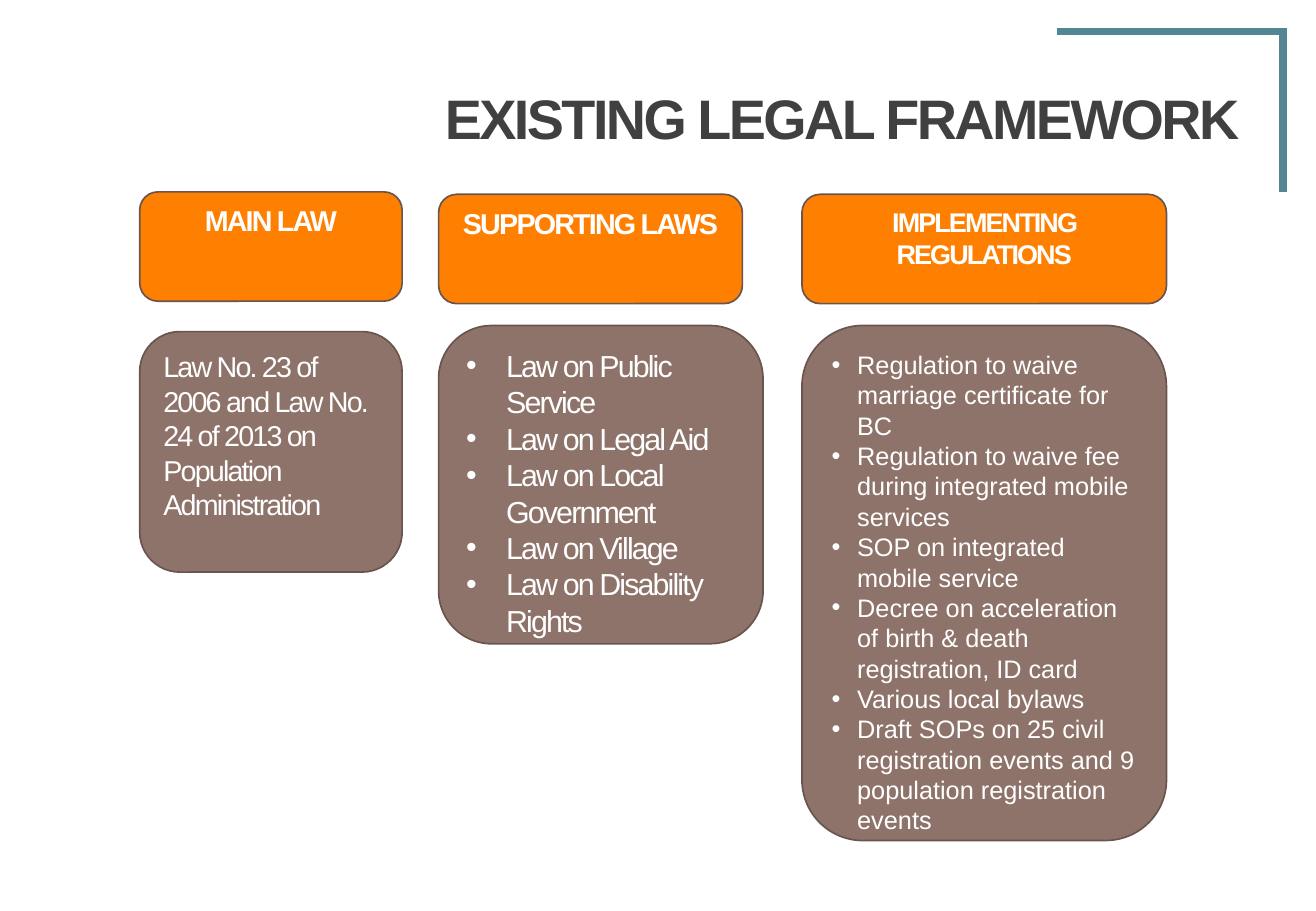
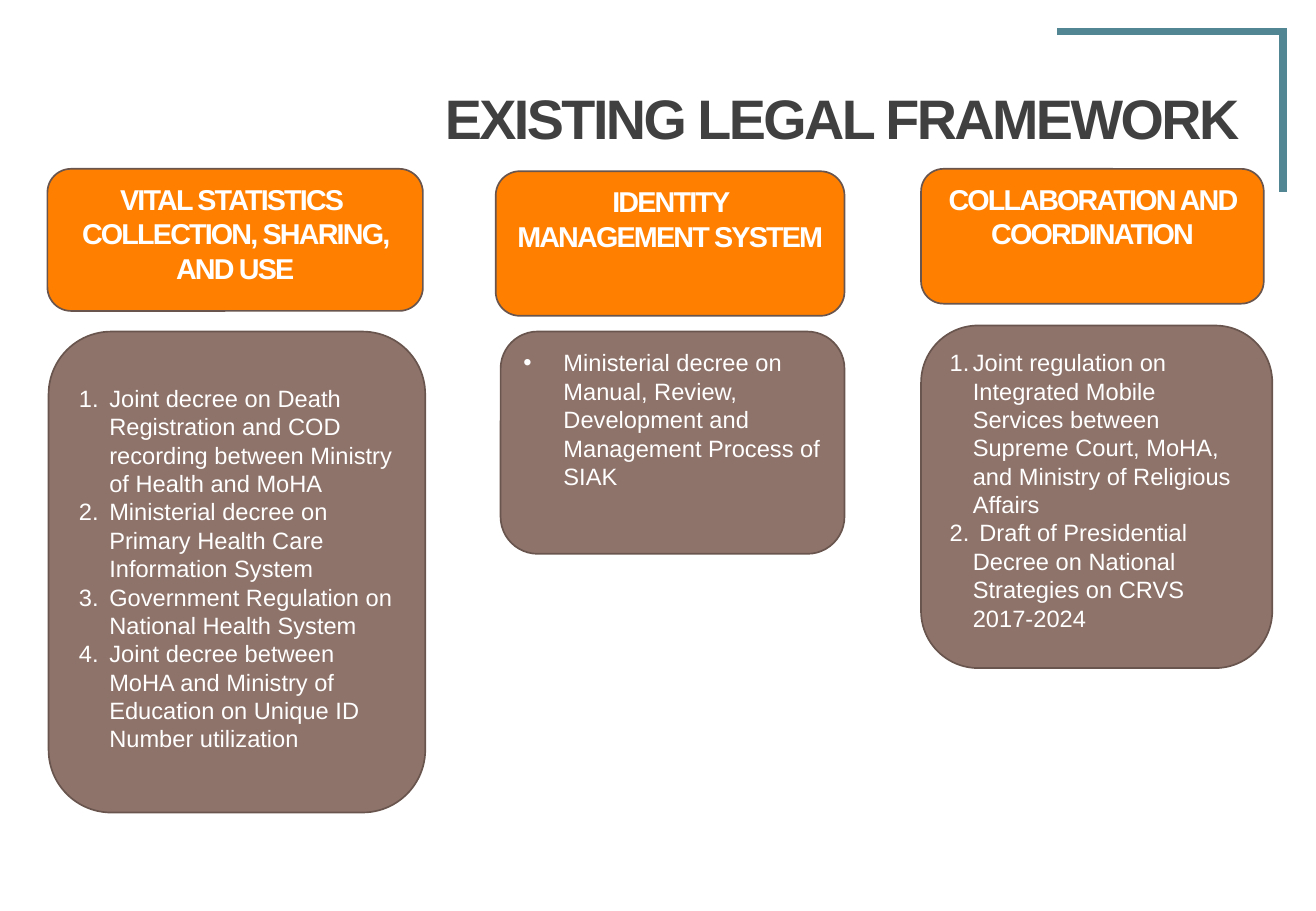
from lxml.etree import SubElement
from pptx import Presentation
from pptx.dml.color import RGBColor
from pptx.enum.shapes import MSO_CONNECTOR, MSO_SHAPE
from pptx.enum.text import MSO_ANCHOR, PP_ALIGN
from pptx.oxml.ns import qn
from pptx.util import Inches, Pt

ORANGE = RGBColor(0xFF, 0x80, 0x00)
BROWN = RGBColor(0x8E, 0x73, 0x6A)
OUTLINE = RGBColor(0x69, 0x55, 0x4E)
TEAL = RGBColor(0x52, 0x86, 0x93)
DARK = RGBColor(0x40, 0x40, 0x40)
WHITE = RGBColor(0xFF, 0xFF, 0xFF)
FONT = "Arial"
TITLE = "EXISTING LEGAL FRAMEWORK"
TIGHT = -1.1
TITLE_SPACING = -1.5


def set_insets(tf, side, top, bottom):
    tf.margin_left = tf.margin_right = Inches(side)
    tf.margin_top, tf.margin_bottom = Inches(top), Inches(bottom)


def add_run(p, text, size, color=WHITE, bold=False, spacing=0):
    r = p.add_run()
    r.text = text
    r.font.name = FONT
    r.font.size = Pt(size)
    r.font.bold = bold
    r.font.color.rgb = color
    if spacing:
        r._r.get_or_add_rPr().set("spc", str(round(spacing * 100)))


def set_marker(p, marker, indent):
    pPr = p._p.get_or_add_pPr()
    pPr.set("marL", str(Inches(indent)))
    pPr.set("indent", str(-Inches(indent)))
    SubElement(pPr, qn("a:buFont")).set("typeface", FONT)
    if marker == "1.":
        SubElement(pPr, qn("a:buAutoNum")).set("type", "arabicPeriod")
    else:
        SubElement(pPr, qn("a:buChar")).set("char", marker)


def add_card(slide, box, fill, lines, size, align=PP_ALIGN.LEFT, bold=False,
             spacing=0, marker=None, indent=0, top=0.05):
    sp = slide.shapes.add_shape(MSO_SHAPE.ROUNDED_RECTANGLE, *map(Inches, box))
    sp.shadow.inherit = False
    sp.fill.solid()
    sp.fill.fore_color.rgb = fill
    sp.line.color.rgb = OUTLINE
    sp.line.width = Pt(1)
    tf = sp.text_frame
    tf.word_wrap = True
    tf.vertical_anchor = MSO_ANCHOR.TOP
    set_insets(tf, 0.1, top, 0.05)
    for i, text in enumerate(lines):
        p = tf.add_paragraph() if i else tf.paragraphs[0]
        p.alignment = align
        if marker:
            set_marker(p, marker, indent)
        add_run(p, text, size, bold=bold, spacing=spacing)


def add_header(slide, box, *lines, size=17):
    add_card(slide, box, ORANGE, lines, size, PP_ALIGN.CENTER, True, TIGHT)


def add_body(slide, box, lines, size, **style):
    add_card(slide, box, BROWN, lines, size, **style)


def add_rule(slide, x1, y1, x2, y2):
    line = slide.shapes.add_connector(
        MSO_CONNECTOR.STRAIGHT, *map(Inches, (x1, y1, x2, y2)))
    line.line.color.rgb = TEAL
    line.line.width = Pt(4.5)
    SubElement(line._element.spPr, qn("a:effectLst"))


def add_frame(slide):
    add_rule(slide, 10.56, 1.58, 10.56, 0.25)
    add_rule(slide, 8.7, 0.26, 10.59, 0.26)
    tb = slide.shapes.add_textbox(*map(Inches, (0.36, 0.5, 9.93, 1)))
    tf = tb.text_frame
    tf.word_wrap = True
    tf.vertical_anchor = MSO_ANCHOR.MIDDLE
    set_insets(tf, 0.09, 0.04, 0.04)
    p = tf.paragraphs[0]
    p.alignment = PP_ALIGN.RIGHT
    p.line_spacing = 0.9
    add_run(p, TITLE, 33, DARK, True, TITLE_SPACING)


def build_laws(slide):
    add_header(slide, (1.15, 1.58, 2.16, 0.9), "MAIN LAW")
    add_body(slide, (1.15, 2.73, 2.16, 1.98), [
        "Law No. 23 of 2006 and Law No. 24 of 2013 on Population Administration",
    ], 17, spacing=TIGHT)
    add_header(slide, (3.61, 1.6, 2.5, 0.9), "SUPPORTING LAWS")
    add_body(slide, (3.61, 2.68, 2.67, 2.62), [
        "Law on Public Service",
        "Law on Legal Aid",
        "Law on Local Government",
        "Law on Village",
        "Law on Disability Rights",
    ], 18, spacing=TIGHT, marker="•", indent=0.33)
    add_header(slide, (6.6, 1.6, 3, 0.9), "IMPLEMENTING REGULATIONS", size=16)
    add_body(slide, (6.6, 2.68, 3, 4.24), [
        "Regulation to waive marriage certificate for BC",
        "Regulation to waive fee during integrated mobile services",
        "SOP on integrated mobile service",
        "Decree on acceleration of birth & death registration, ID card",
        "Various local bylaws",
        "Draft SOPs on 25 civil registration events and 9 population "
        "registration events",
    ], 15, marker="•", indent=0.21)
    add_frame(slide)


def build_decrees(slide):
    add_header(slide, (0.39, 1.39, 3.09, 1.17),
               "VITAL STATISTICS ", "COLLECTION, SHARING, AND USE")
    add_body(slide, (0.4, 2.73, 3.1, 3.96), [
        "Joint decree on Death Registration and COD recording between "
        "Ministry of Health and MoHA",
        "Ministerial decree on Primary Health Care Information System",
        "Government Regulation on National Health System",
        "Joint decree between MoHA and Ministry of Education on Unique ID "
        "Number utilization",
    ], 14, marker="1.", indent=0.25, top=0.28)
    add_header(slide, (4.08, 1.41, 2.87, 1.19), "IDENTITY MANAGEMENT SYSTEM")
    add_body(slide, (4.12, 2.73, 2.83, 1.83), [
        "Ministerial decree on Manual, Review, Development and Management "
        "Process of SIAK",
    ], 14, marker="•", indent=0.33)
    add_header(slide, (7.58, 1.39, 2.82, 1.11), "COLLABORATION AND COORDINATION")
    add_body(slide, (7.58, 2.68, 2.89, 2.82), [
        "Joint regulation on Integrated Mobile Services between Supreme "
        "Court, MoHA, and Ministry of Religious Affairs",
        " Draft of Presidential Decree on National Strategies on CRVS 2017-2024",
    ], 14, marker="1.", indent=0.19)
    add_frame(slide)


def main():
    prs = Presentation()
    prs.slide_width, prs.slide_height = Inches(10.83), Inches(7.5)
    for build in (build_laws, build_decrees):
        build(prs.slides.add_slide(prs.slide_layouts[6]))
    prs.save("out.pptx")


if __name__ == "__main__":
    main()
